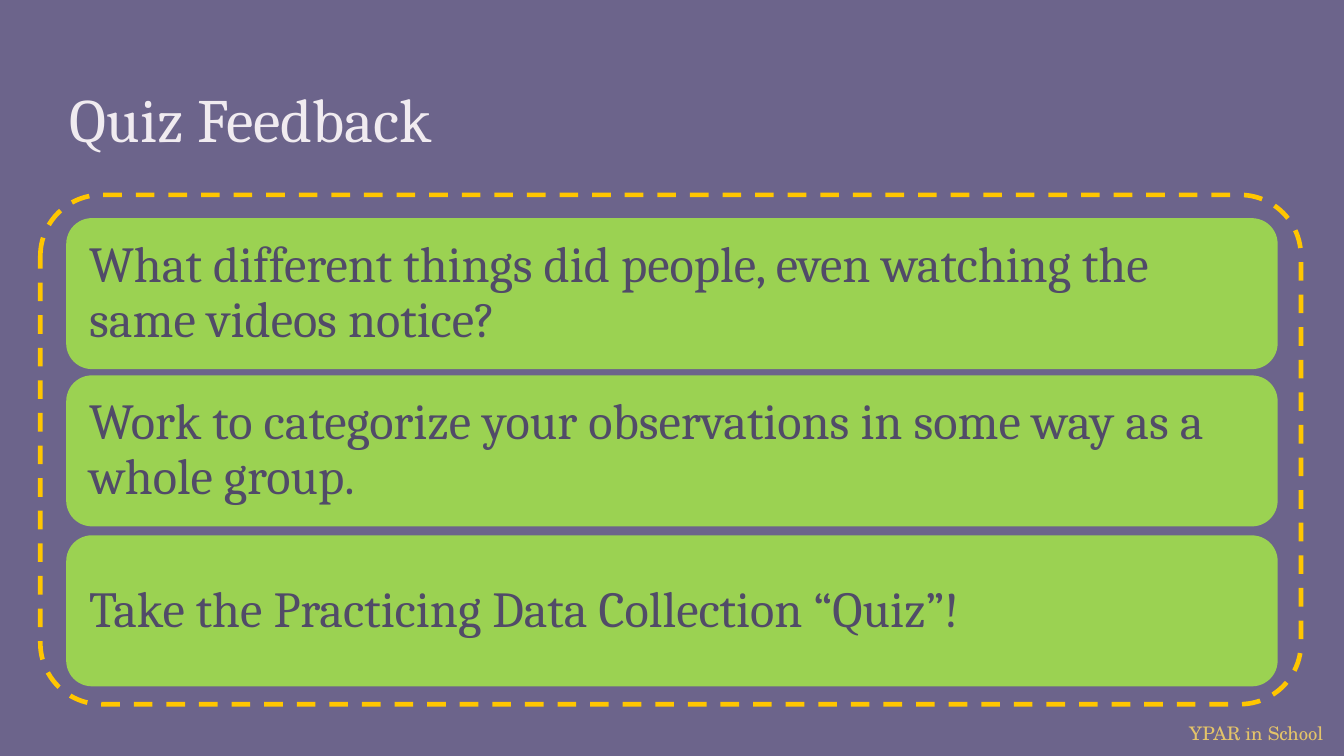
from dataclasses import dataclass

from pptx import Presentation
from pptx.dml.color import RGBColor
from pptx.enum.dml import MSO_LINE
from pptx.enum.shapes import MSO_SHAPE as Preset
from pptx.enum.text import MSO_ANCHOR as Anchor, PP_ALIGN as Align
from pptx.shapes.autoshape import Shape
from pptx.slide import Slide
from pptx.util import Inches, Pt


@dataclass(frozen=True)
class Theme:
    background: str = "6C648B"
    title: str = "F0EBF0"
    card: str = "9BD252"
    card_text: str = "514B68"
    frame: str = "FFC600"
    footer: str = "E4C469"
    font: str = "Cambria"
    footer_font: str = "TeX Gyre Schola"
    title_size: float = 33
    card_size: float = 27
    footer_size: float = 10


@dataclass(frozen=True)
class Box:
    left: float
    top: float
    width: float
    height: float

    def lengths(self) -> tuple:
        return tuple(map(Inches, (self.left, self.top, self.width, self.height)))


@dataclass(frozen=True)
class TextStyle:
    font: str
    size: float
    color: str
    anchor: Anchor
    inset_x: float = 0.1
    inset_y: float = 0.1
    line_spacing: float = 1.0
    wrap: bool = True


@dataclass(frozen=True)
class Card:
    top: float
    text: str


THEME = Theme()
TITLE_STYLE = TextStyle(THEME.font, THEME.title_size, THEME.title, Anchor.BOTTOM)
CARD_STYLE = TextStyle(THEME.font, THEME.card_size, THEME.card_text,
                       Anchor.MIDDLE, 0.11, 0.11, 0.9)
FOOTER_STYLE = TextStyle(THEME.footer_font, THEME.footer_size, THEME.footer,
                         Anchor.TOP, inset_y=0.05, wrap=False)
CARDS = (
    Card(1.63, "What different things did people, even watching the same videos notice?"),
    Card(2.8, "Work to categorize your observations in some way as a whole group."),
    Card(3.99, "Take the Practicing Data Collection “Quiz”!"),
)


def rgb(color: str) -> RGBColor:
    return RGBColor.from_string(color)


def write(shape: Shape, text: str, style: TextStyle) -> None:
    frame = shape.text_frame
    frame.word_wrap = style.wrap
    frame.vertical_anchor = style.anchor
    frame.margin_left = frame.margin_right = Inches(style.inset_x)
    frame.margin_top = frame.margin_bottom = Inches(style.inset_y)
    paragraph = frame.paragraphs[0]
    paragraph.alignment = Align.LEFT
    paragraph.line_spacing = style.line_spacing
    run = paragraph.add_run()
    run.text = text
    run.font.name = style.font
    run.font.size = Pt(style.size)
    run.font.color.rgb = rgb(style.color)


def add_label(slide: Slide, box: Box, text: str, style: TextStyle) -> None:
    write(slide.shapes.add_textbox(*box.lengths()), text, style)


def add_rounded(slide: Slide, box: Box, line: str, weight: float) -> Shape:
    shape = slide.shapes.add_shape(Preset.ROUNDED_RECTANGLE, *box.lengths())
    shape.shadow.inherit = False
    shape.line.color.rgb = rgb(line)
    shape.line.width = Pt(weight)
    return shape


def add_card(slide: Slide, card: Card) -> None:
    shape = add_rounded(slide, Box(0.5, card.top, 9, 1.11), THEME.card, 1)
    shape.fill.solid()
    shape.fill.fore_color.rgb = rgb(THEME.card)
    write(shape, card.text, CARD_STYLE)


def add_frame(slide: Slide, box: Box) -> None:
    shape = add_rounded(slide, box, THEME.frame, 2.5)
    shape.fill.background()
    shape.adjustments[0] = 0.12
    shape.line.dash_style = MSO_LINE.DASH


def main() -> None:
    presentation = Presentation()
    presentation.slide_width = Inches(10)
    presentation.slide_height = Inches(10 * 9 / 16)
    slide = presentation.slides.add_slide(presentation.slide_layouts[6])
    slide.background.fill.solid()
    slide.background.fill.fore_color.rgb = rgb(THEME.background)
    add_label(slide, Box(8.75, 5.32, 1.25, 0.27), "YPAR in School", FOOTER_STYLE)
    add_label(slide, Box(0.42, 0.5, 9.15, 0.75), "Quiz Feedback", TITLE_STYLE)
    for card in CARDS:
        add_card(slide, card)
    add_frame(slide, Box(0.3, 1.45, 9.38, 3.79))
    presentation.save("out.pptx")


if __name__ == "__main__":
    main()
